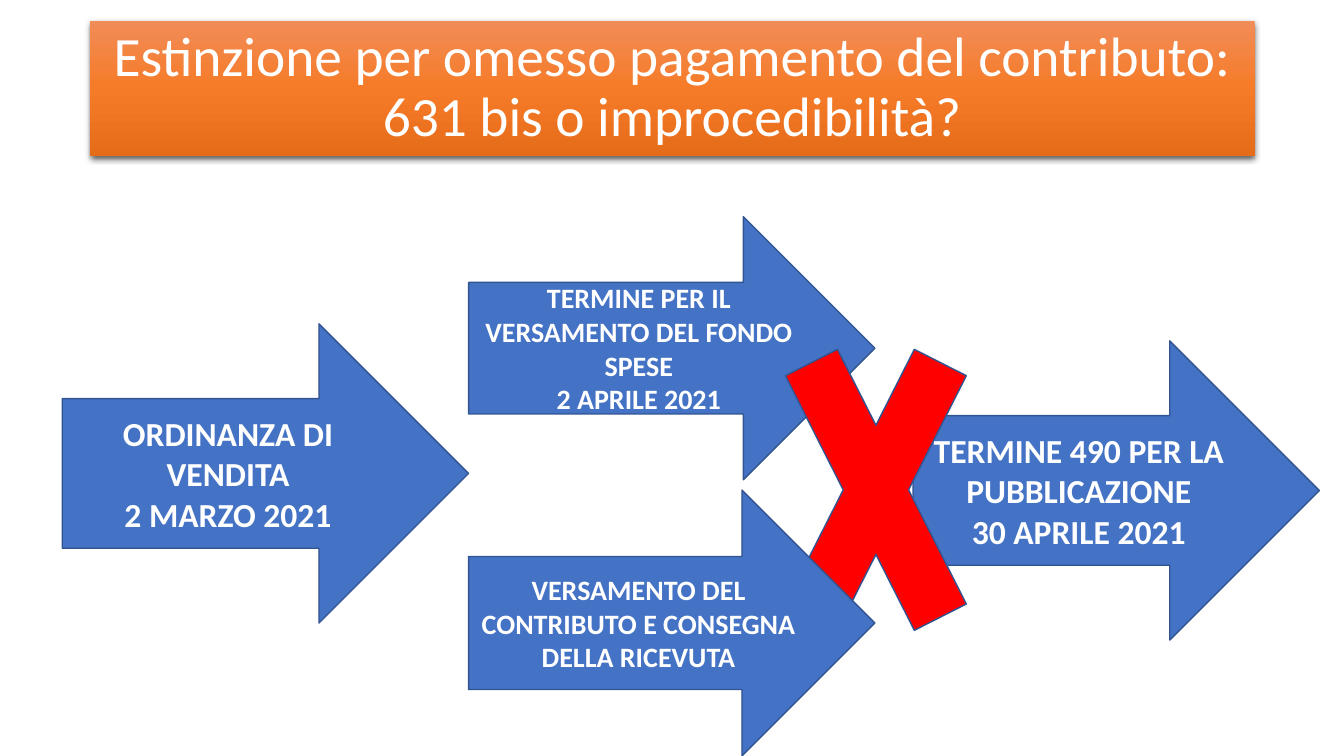
from lxml import etree
from pptx import Presentation
from pptx import util as u
from pptx.dml.color import RGBColor
from pptx.enum import shapes, text

NS = "http://schemas.openxmlformats.org/drawingml/2006/main"
FONT = "Calibri"
BLUE, EDGE, RED, WHITE = "4472C4", "325491", "FF0000", "FFFFFF"
WIDE = 10.24  # arrow width in cm


def color(code):
    return RGBColor.from_string(code)


def apply(obj, form):
    for key, val in form.items():
        setattr(obj, key, val)


def place(shape, box):
    apply(shape, dict(zip(("left", "top", "width", "height"), map(u.Cm, box))))


def write(frame, lines, size, bold=False, space=None):
    apply(frame, {"word_wrap": True, "auto_size": text.MSO_AUTO_SIZE.NONE,
                  "vertical_anchor": text.MSO_ANCHOR.MIDDLE})
    frame.text = "\n".join(lines)
    for para in frame.paragraphs:
        apply(para, {"alignment": text.PP_ALIGN.CENTER, "line_spacing": space})
        for run in para.runs:
            apply(run.font, {"name": FONT, "size": u.Pt(size), "bold": bold})
            run.font.color.rgb = color(WHITE)


def banner(slide, box, words):
    title = slide.shapes.title
    place(title, box)
    write(title.text_frame, [words], 39.6, space=0.9)
    # Three-stop gradient and soft shadow below
    stops = "".join(
        f'<a:gs pos="{pos * 1000}"><a:srgbClr val="{code}"/></a:gs>'
        for pos, code in ((0, "F18C57"), (50, "F67B28"), (100, "E56C19")))
    fill = (f'<a:gradFill xmlns:a="{NS}" rotWithShape="1"><a:gsLst>{stops}</a:gsLst>'
            '<a:lin ang="5400000" scaled="0"/></a:gradFill>')
    shade = (f'<a:effectLst xmlns:a="{NS}"><a:outerShdw blurRad="{u.Pt(4.5)}" '
             f'dist="{u.Pt(1.5)}" dir="5400000" algn="ctr" rotWithShape="0">'
             '<a:srgbClr val="000000"><a:alpha val="63000"/></a:srgbClr>'
             '</a:outerShdw></a:effectLst>')
    for part in (fill, shade):
        title._element.spPr.append(etree.fromstring(part))


def figure(slide, kind, box, fill):
    shape = slide.shapes.add_shape(kind, *map(u.Cm, box))
    shape.shadow.inherit = False
    shape.fill.solid()
    shape.fill.fore_color.rgb = color(fill)
    shape.line.color.rgb = color(EDGE)
    shape.line.width = u.Pt(1)
    return shape


def arrow(slide, box, lines, size):
    shape = figure(slide, shapes.MSO_SHAPE.RIGHT_ARROW, box, BLUE)
    write(shape.text_frame, lines, size, bold=True)


def flow(slide, box):
    left, top, width, high = box
    mid = left + WIDE
    last = left + width - WIDE
    # Order, first deadline and final deadline
    arrow(slide, (left, top + 2.7, WIDE, 7.54),
          ["ORDINANZA DI VENDITA", "2 MARZO 2021"], 24)
    arrow(slide, (mid, top, WIDE, 6.63),
          ["TERMINE PER IL VERSAMENTO DEL FONDO SPESE", "2 APRILE 2021"], 20)
    arrow(slide, (last, top + 3.13, WIDE, 7.54),
          ["TERMINE 490 PER LA PUBBLICAZIONE", "30 APRILE 2021"], 24)
    # Red cross, partly under the payment arrow
    figure(slide, shapes.MSO_SHAPE.MATH_MULTIPLY,
           (last - 4.06, top + 0.71, 6.25, 12.35), RED)
    arrow(slide, (mid, top + high - 6.7, WIDE, 6.7),
          ["VERSAMENTO DEL CONTRIBUTO E CONSEGNA DELLA RICEVUTA"], 20)


def main():
    deck = Presentation()
    apply(deck, {"slide_width": u.Cm(33.87), "slide_height": u.Cm(19.05)})
    slide = deck.slides.add_slide(deck.slide_layouts[5])
    banner(slide, (2.26, 0.53, 29.36, 3.4),
           "Estinzione per omesso pagamento del contributo: "
           "631 bis o improcedibilità?")
    flow(slide, (1.57, 5.46, 31.68, 13.59))
    deck.save("out.pptx")


if __name__ == "__main__":
    main()
